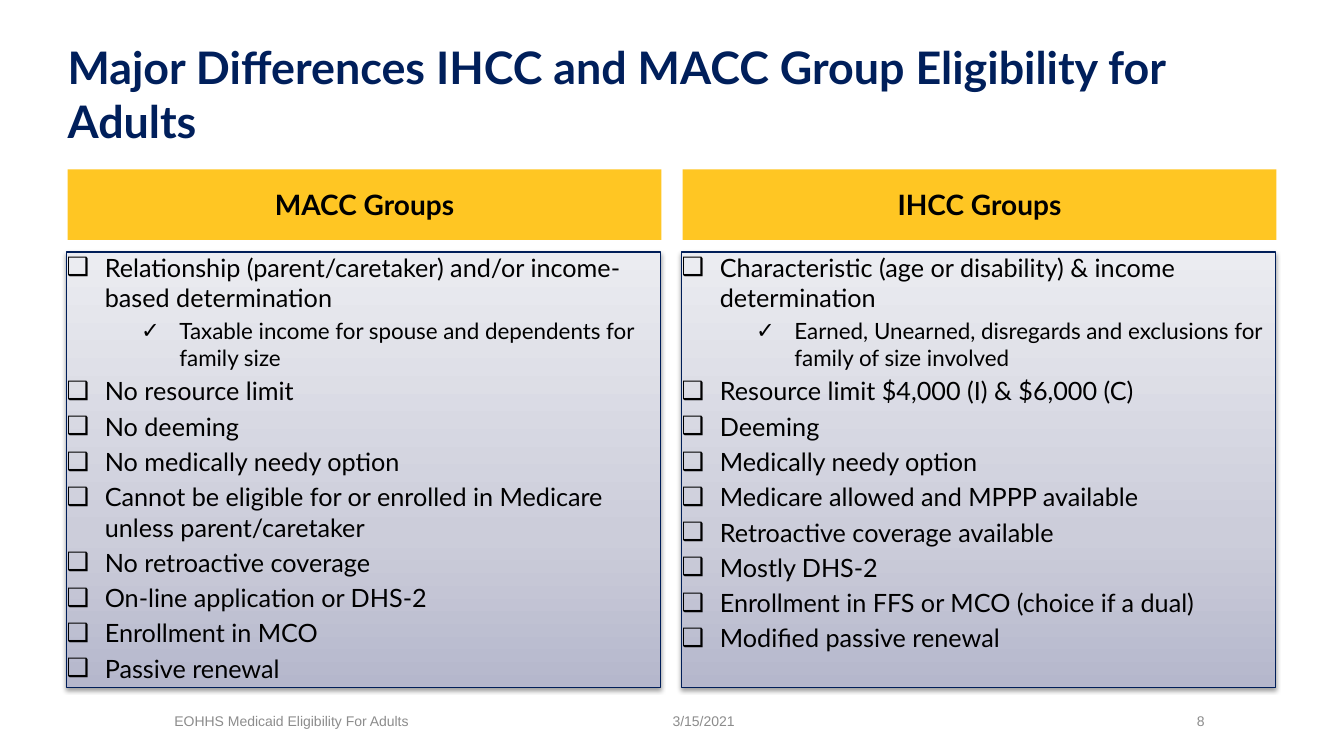
from copy import deepcopy
from dataclasses import dataclass

from lxml.etree import SubElement
from pptx import Presentation
from pptx.dml.color import RGBColor
from pptx.enum.shapes import MSO_SHAPE
from pptx.enum.text import MSO_ANCHOR, MSO_AUTO_SIZE, PP_ALIGN
from pptx.oxml.ns import qn
from pptx.util import Pt

TITLE = "Major Differences IHCC and MACC Group Eligibility for Adults"
GROUPS = [
    ("MACC Groups", [
        (0, "Relationship (parent/caretaker) and/or income-based determination"),
        (1, "Taxable income for spouse and dependents for family size"),
        (0, "No resource limit"),
        (0, "No deeming"),
        (0, "No medically needy option"),
        (0, "Cannot be eligible for or enrolled in Medicare unless parent/caretaker"),
        (0, "No retroactive coverage"),
        (0, "On-line application or DHS-2"),
        (0, "Enrollment in MCO"),
        (0, "Passive renewal"),
    ]),
    ("IHCC Groups", [
        (0, "Characteristic (age or disability) & income determination"),
        (1, "Earned, Unearned, disregards and exclusions for family of size involved"),
        (0, "Resource limit $4,000 (I) & $6,000 (C)"),
        (0, "Deeming"),
        (0, "Medically needy option"),
        (0, "Medicare allowed and MPPP available"),
        (0, "Retroactive coverage available"),
        (0, "Mostly DHS-2"),
        (0, "Enrollment in FFS or MCO (choice if a dual)"),
        (0, "Modified passive renewal"),
    ]),
]
FOOTERS = [("3/15/2021", 667, 311), ("EOHHS Medicaid Eligibility For Adults", 173, 422), ("8", 1187, 80)]

PX = 9144
SLIDE_SIZE = (1333, 750)
TITLE_BOX = (67, 30, 1200, 125)
COLUMN_LEFT, COLUMN_PITCH, COLUMN_WIDTH = 67, 610, 589
HEADER_TOP, HEADER_HEIGHT = 168, 70
PANEL_TOP, PANEL_HEIGHT = 250, 432
FOOTER_TOP, FOOTER_HEIGHT = 695, 40
HANGING = 38
TEXT_INDENTS = (38, 112)
BULLETS = ("❑", "✓")


@dataclass(frozen=True)
class Theme:
    font: str = "Lato"
    footer_font: str = "Arial"
    title: str = "001F5B"
    text: str = "000000"
    footer: str = "8C8C8C"
    header: str = "FFC623"
    border: str = "001E59"
    gradient: tuple = ((0, "B5B7CC"), (0.35, "CCCDDA"), (1, "EBECF1"))
    title_size: int = 32
    header_size: int = 20
    item_sizes: tuple = (18, 16)
    footer_size: int = 10


THEME = Theme()


def place(shape, *box):
    shape.left, shape.top, shape.width, shape.height = (length * PX for length in box)


def prepare_frame(shape, anchor):
    frame = shape.text_frame
    frame.margin_left = frame.margin_top = frame.margin_right = frame.margin_bottom = 0
    frame.word_wrap = True
    frame.auto_size = MSO_AUTO_SIZE.NONE
    frame.vertical_anchor = anchor
    return frame


def style(paragraph, size, color, name=THEME.font, bold=False, align=PP_ALIGN.LEFT):
    paragraph.alignment = align
    font = paragraph.font
    font.name, font.size, font.bold = name, Pt(size), bold
    font.color.rgb = RGBColor.from_string(color)


def add_rectangle(slide, *box):
    shape = slide.shapes.add_shape(MSO_SHAPE.RECTANGLE, *(length * PX for length in box))
    shape.shadow.inherit = False
    return shape


def add_header(slide, left, text):
    shape = add_rectangle(slide, left, HEADER_TOP, COLUMN_WIDTH, HEADER_HEIGHT)
    shape.fill.solid()
    shape.fill.fore_color.rgb = RGBColor.from_string(THEME.header)
    shape.line.fill.background()
    paragraph = prepare_frame(shape, MSO_ANCHOR.MIDDLE).paragraphs[0]
    paragraph.text = text
    style(paragraph, THEME.header_size, THEME.text, bold=True, align=PP_ALIGN.CENTER)


def paint_panel(shape):
    shape.fill.gradient()
    shape.fill.gradient_angle = 90
    properties = shape.element.spPr
    stop_list = properties.find(".//" + qn("a:gsLst"))
    stop_list.append(deepcopy(stop_list[0]))
    for stop, (position, color) in zip(shape.fill.gradient_stops, THEME.gradient):
        stop.position = position
        stop.color.rgb = RGBColor.from_string(color)
    shape.line.color.rgb = RGBColor.from_string(THEME.border)
    shape.line.width = Pt(0.75)
    shadow = SubElement(properties.find(qn("a:effectLst")), qn("a:outerShdw"),
                        blurRad="40000", dist="20000", dir="5400000", rotWithShape="0")
    color = SubElement(shadow, qn("a:srgbClr"), val="000000")
    SubElement(color, qn("a:alpha"), val="38000")


def add_bullet(paragraph, level):
    properties = paragraph._p.get_or_add_pPr()
    properties.set("marL", str(TEXT_INDENTS[level] * PX))
    properties.set("indent", str(-HANGING * PX))
    SubElement(properties, qn("a:buFont"), typeface=THEME.footer_font)
    SubElement(properties, qn("a:buChar"), char=BULLETS[level])


def add_panel(slide, left, items):
    shape = add_rectangle(slide, left, PANEL_TOP, COLUMN_WIDTH, PANEL_HEIGHT)
    paint_panel(shape)
    frame = prepare_frame(shape, MSO_ANCHOR.TOP)
    for index, (level, text) in enumerate(items):
        paragraph = frame.add_paragraph() if index else frame.paragraphs[0]
        paragraph.text = text
        paragraph.level = level
        add_bullet(paragraph, level)
        size = THEME.item_sizes[level]
        style(paragraph, size, THEME.text)
        paragraph.space_before = Pt(size * 0.2 if index else 0)


def add_footer(slide, text, left, width):
    box = slide.shapes.add_textbox(left * PX, FOOTER_TOP * PX, width * PX, FOOTER_HEIGHT * PX)
    paragraph = prepare_frame(box, MSO_ANCHOR.MIDDLE).paragraphs[0]
    paragraph.text = text
    style(paragraph, THEME.footer_size, THEME.footer, THEME.footer_font)


def main():
    presentation = Presentation()
    presentation.slide_width, presentation.slide_height = (length * PX for length in SLIDE_SIZE)
    slide = presentation.slides.add_slide(presentation.slide_layouts.get_by_name("Title Only"))
    title = slide.shapes.title
    place(title, *TITLE_BOX)
    paragraph = prepare_frame(title, MSO_ANCHOR.MIDDLE).paragraphs[0]
    paragraph.text = TITLE
    style(paragraph, THEME.title_size, THEME.title, bold=True)
    for index, (name, items) in enumerate(GROUPS):
        left = COLUMN_LEFT + index * COLUMN_PITCH
        add_header(slide, left, name)
        add_panel(slide, left - 1, items)
    for text, left, width in FOOTERS:
        add_footer(slide, text, left, width)
    presentation.save("out.pptx")


if __name__ == "__main__":
    main()
